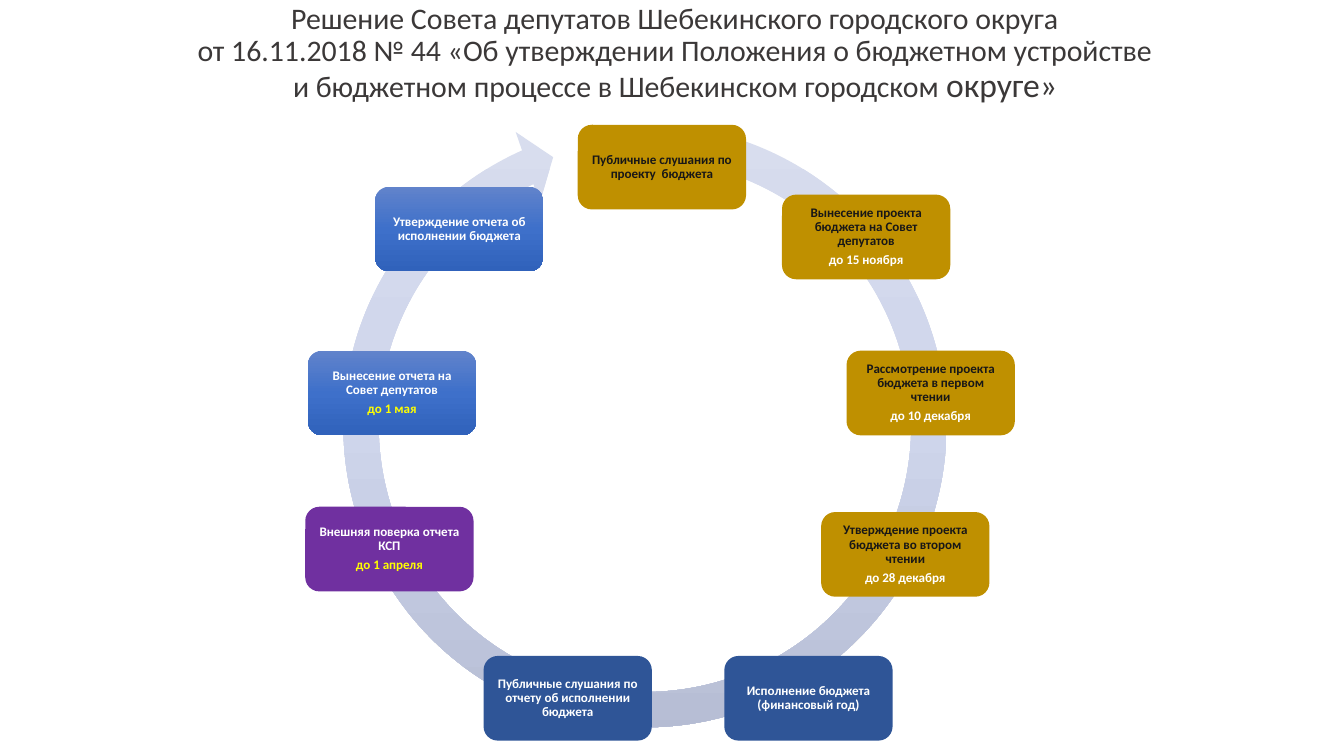
from copy import deepcopy
from dataclasses import dataclass

from pptx import Presentation
from pptx.dml.color import RGBColor
from pptx.enum.shapes import MSO_SHAPE
from pptx.enum.text import MSO_ANCHOR, PP_ALIGN
from pptx.oxml.ns import qn
from pptx.util import Cm, Pt

GOLD, NAVY, PURPLE = "BF9000", "2F5597", "7030A0"
DARK, WHITE, YELLOW = "181717", "FFFFFF", "FFFF00"
BLUE_GRADIENT = ("6183CB", "3E70CA", "3062BB")
RING_GRADIENT = ("D8DDEE", "CED5EB", "B5BCD3")
STEP_WIDTH, STEP_HEIGHT = Cm(3.18), Cm(1.6)


@dataclass
class Step:
    left: float
    top: float
    fill: str | tuple[str, ...]
    text: str
    text_color: str = WHITE
    deadline: str = ""
    deadline_color: str = WHITE


STEPS = [
    Step(10.92, 2.36, GOLD, "Публичные слушания по проекту  бюджета", DARK),
    Step(14.78, 3.68, GOLD, "Вынесение проекта бюджета на Совет депутатов", DARK, "до 15 ноября"),
    Step(16, 6.63, GOLD, "Рассмотрение проекта бюджета в первом чтении", DARK, "до 10 декабря"),
    Step(15.52, 9.68, GOLD, "Утверждение проекта бюджета во втором чтении", DARK, "до 28 декабря"),
    Step(13.69, 12.4, NAVY, "Исполнение бюджета (финансовый год)"),
    Step(9.14, 12.4, NAVY, "Публичные слушания по отчету об исполнении бюджета"),
    Step(5.77, 9.58, PURPLE, "Внешняя поверка отчета КСП", WHITE, "до 1 апреля", YELLOW),
    Step(5.82, 6.63, BLUE_GRADIENT, "Вынесение отчета на Совет депутатов", WHITE, "до 1 мая", YELLOW),
    Step(7.09, 3.53, BLUE_GRADIENT, "Утверждение отчета об исполнении бюджета"),
]

TITLE_LINES = [
    "Решение Совета депутатов Шебекинского городского округа",
    "от 16.11.2018 № 44 «Об утверждении Положения о бюджетном устройстве",
    "и бюджетном процессе в Шебекинском городском ",
]


def rgb(value: str) -> RGBColor:
    return RGBColor.from_string(value)


def set_attributes(target, values: dict) -> None:
    for name, value in values.items():
        setattr(target, name, value)


def paint(shape, fill: str | tuple[str, ...]) -> None:
    """Fill with one colour, or with evenly spaced stops from top to bottom."""
    shape.shadow.inherit = False
    shape.line.fill.background()
    if isinstance(fill, str):
        shape.fill.solid()
        shape.fill.fore_color.rgb = rgb(fill)
        return
    shape.fill.gradient()
    shape.fill.gradient_angle = 270
    stop_list = shape._element.spPr.find(qn("a:gradFill")).find(qn("a:gsLst"))
    stop_list.insert(1, deepcopy(stop_list[0]))
    for index, (stop, color) in enumerate(zip(shape.fill.gradient_stops, fill)):
        stop.position = index / (len(fill) - 1)
        stop.color.rgb = rgb(color)


def add_run(paragraph, text: str, size: float, color: str, bold: bool = False) -> None:
    run = paragraph.add_run()
    run.text = text
    set_attributes(run.font, {"name": "Calibri", "size": Pt(size), "bold": bold})
    run.font.color.rgb = rgb(color)


def add_title(slide) -> None:
    frame = slide.shapes.add_textbox(Cm(0.71), Cm(0.3), Cm(23.6), Cm(1.8)).text_frame
    set_attributes(frame, {"word_wrap": True, "vertical_anchor": MSO_ANCHOR.BOTTOM})
    paragraph = frame.paragraphs[0]
    set_attributes(paragraph, {"alignment": PP_ALIGN.CENTER, "line_spacing": 0.9})
    paragraph._p.get_or_add_pPr().set("marL", str(Cm(0.5)))
    for index, line in enumerate(TITLE_LINES):
        if index:
            paragraph.add_line_break()
        add_run(paragraph, line, 16, "3B3838")
    add_run(paragraph, "округе»", 18, "3B3838")


def add_ring(slide) -> None:
    ring = slide.shapes.add_shape(
        MSO_SHAPE.CIRCULAR_ARROW, Cm(6.12), Cm(1.98), Cm(12.14), Cm(12.14)
    )
    for index, value in enumerate((0.055, 3.307, 147.376, 168.243, 0.058)):
        ring.adjustments[index] = value
    paint(ring, RING_GRADIENT)


def add_step(slide, step: Step) -> None:
    shape = slide.shapes.add_shape(
        MSO_SHAPE.ROUNDED_RECTANGLE, Cm(step.left), Cm(step.top), STEP_WIDTH, STEP_HEIGHT
    )
    paint(shape, step.fill)
    frame = shape.text_frame
    set_attributes(frame, {"word_wrap": True, "vertical_anchor": MSO_ANCHOR.MIDDLE})
    for side in ("left", "top", "right", "bottom"):
        setattr(frame, f"margin_{side}", Cm(0.15))
    lines = [(step.text, step.text_color)]
    if step.deadline:
        lines.append((step.deadline, step.deadline_color))
    for index, (text, color) in enumerate(lines):
        paragraph = frame.add_paragraph() if index else frame.paragraphs[0]
        set_attributes(
            paragraph,
            {"alignment": PP_ALIGN.CENTER, "line_spacing": 0.9, "space_after": Pt(2.7)},
        )
        add_run(paragraph, text, 7, color, bold=True)


def main() -> None:
    presentation = Presentation()
    set_attributes(presentation, {"slide_width": Cm(25.4), "slide_height": Cm(14.29)})
    slide = presentation.slides.add_slide(presentation.slide_layouts[6])
    add_title(slide)
    add_ring(slide)
    for step in STEPS:
        add_step(slide, step)
    presentation.save("out.pptx")


if __name__ == "__main__":
    main()
